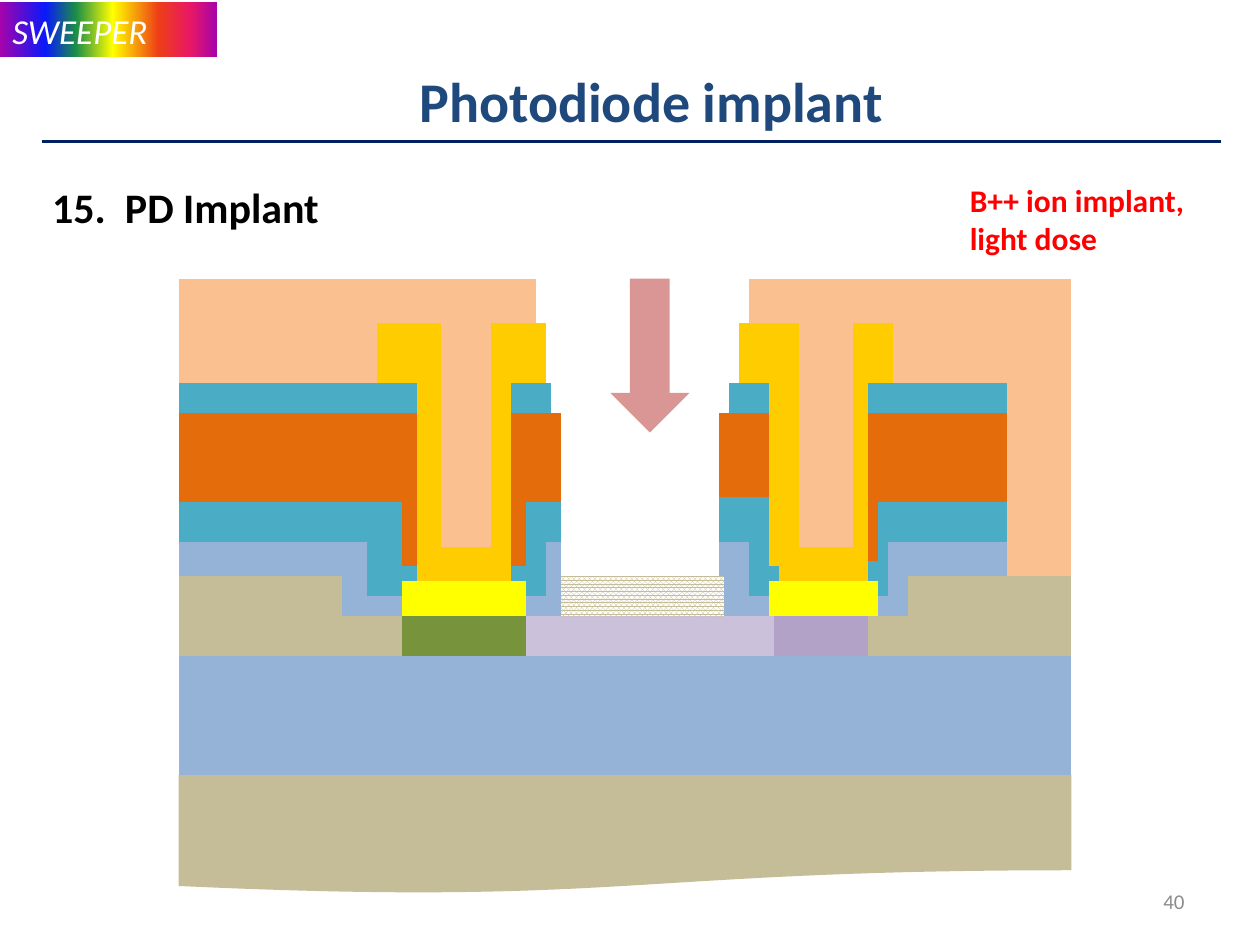
"""Builds the photodiode implant process slide."""
from lxml.etree import SubElement
from pptx import Presentation
from pptx.dml.color import RGBColor
from pptx.enum.dml import MSO_PATTERN
from pptx.enum.shapes import MSO_CONNECTOR, MSO_SHAPE
from pptx.enum.text import MSO_ANCHOR, PP_ALIGN
from pptx.oxml.ns import qn
from pptx.util import Cm, Pt

COLORS = {
    "navy": "002060", "title": "1F497D", "black": "000000", "white": "FFFFFF",
    "red": "FF0000", "grey": "8C8C8C", "resist": "FAC090", "metal": "FFCC00",
    "polymer": "E46C0A", "nitride": "4BACC6", "contact": "FFFF00",
    "oxide": "95B3D7", "silicon": "C4BD97", "n_well": "77933C",
    "p_well": "B3A2C7", "channel": "CCC1DA", "ions": "D99694",
}
SPECTRUM = [(0, "A603AB"), (21, "0819FB"), (35, "1A8D48"), (52, "FFFF00"),
            (73, "EE3F17"), (88, "E81766"), (100, "A603AB")]
STACK_LEFT, STACK_TOP = 3.6, 5.62

STACK = [
    ("resist", [(14.4, 0, 3.6, 7.8), (11.5, 0, 2.9, 7.8), (0, 0, 7.2, 7.6)]),
    ("metal", [(11.3, 0.9, 1.2, 5.9), (13.6, 0.9, 0.8, 5.9), (6.3, 0.9, 1.1, 5.9),
               (4, 0.9, 1.3, 5.9), (5.2, 5.4, 1.4, 0.7)]),
    ("polymer", [(10.9, 2.7, 1, 4.9), (13.9, 2.7, 2.8, 4.9), (6.7, 2.7, 1, 4.9),
                 (0, 2.7, 4.8, 4.9)]),
    ("nitride", [(13.9, 5.7, 1.5, 1.9), (6.7, 5.8, 1, 1.9), (0, 5.8, 4.8, 1.9)]),
    ("contact", [(0, 6.1, 18, 0.7)]),
    ("nitride", [(10.9, 4.4, 1, 3.2), (7, 4.5, 0.7, 3.2), (14.1, 4.5, 2.6, 3.1),
                 (0, 4.5, 4.5, 3.1)]),
    ("oxide", [(7.4, 5.3, 0.3, 1.4), (7, 6.4, 4.9, 0.4), (14.1, 6.4, 3.9, 0.4),
               (0, 5.3, 3.8, 1.6), (14.3, 5.3, 2.4, 1.5), (0, 6.4, 4.5, 0.4),
               (0, 7.6, 18, 2.4)]),
    ("silicon", [(0, 6.8, 18, 0.8), (0, 6, 3.3, 1.6), (14.7, 6, 3.3, 1.6)]),
    ("n_well", [(4.5, 6.8, 2.5, 0.8)]),
    ("p_well", [(12, 6.8, 1.9, 0.8)]),
    ("channel", [(7, 6.8, 5, 0.8)]),
    ("nitride", [(0, 2.1, 4.8, 0.6), (6.7, 2.1, 0.8, 0.6), (13.9, 2.1, 2.8, 0.6),
                 (11.1, 2.1, 0.8, 0.6), (14.8, 4.9, 1.9, 0.4)]),
    ("metal", [(12.3, 5.4, 1.6, 0.7)]),
    ("oxide", [(10.9, 5.3, 0.6, 1.5)]),
    ("nitride", [(11.5, 5.8, 0.6, 0.3)]),
]


def rgb(name):
    """Return the named colour."""
    return RGBColor.from_string(COLORS[name])


class SlideBuilder:
    """Holds the style and the current slide."""

    font = "Calibri"

    def __init__(self, slide):
        """Keep the slide to draw on."""
        self.slide = slide

    def shape(self, kind, box):
        """Add a preset shape without outline or shadow."""
        shape = self.slide.shapes.add_shape(kind, *map(Cm, box))
        shape.shadow.inherit = False
        shape.line.fill.background()
        return shape

    def layer(self, color, box, kind=MSO_SHAPE.FLOWCHART_PROCESS):
        """Add a solid part, placed from the top left of the stack."""
        left, top, width, height = box
        part = self.shape(kind, (STACK_LEFT + left, STACK_TOP + top, width, height))
        part.fill.solid()
        part.fill.fore_color.rgb = rgb(color)
        return part

    def hatched_layer(self, color, box):
        """Add a part with a dense dotted pattern."""
        fill = self.layer(color, box).fill
        fill.patterned()
        fill.pattern = MSO_PATTERN.PERCENT_80
        fill.fore_color.rgb = rgb(color)
        fill.back_color.rgb = rgb("white")

    def fill_text(self, frame, words, color, align=PP_ALIGN.LEFT,
                  anchor=MSO_ANCHOR.TOP, wrap=True, tab=None, **style):
        """Put one styled paragraph into a text frame."""
        frame.word_wrap = wrap
        frame.vertical_anchor = anchor
        paragraph = frame.paragraphs[0]
        paragraph.text = words
        paragraph.alignment = align
        if tab:
            tabs = SubElement(paragraph._p.get_or_add_pPr(), qn("a:tabLst"))
            SubElement(tabs, qn("a:tab"), pos=str(Cm(tab)), algn="l")
        font = paragraph.runs[0].font
        for key, value in {"name": self.font, **style}.items():
            setattr(font, key, value)
        font.color.rgb = rgb(color)

    def text(self, box, words, color, **style):
        """Add a text box."""
        frame = self.slide.shapes.add_textbox(*map(Cm, box)).text_frame
        self.fill_text(frame, words, color, **style)

    def badge(self, box, words, stops, **style):
        """Add a label on a horizontal gradient."""
        badge = self.shape(MSO_SHAPE.RECTANGLE, box)
        badge.fill.gradient()
        badge.fill.gradient_angle = 0
        stop_list = badge._element.spPr.find(qn("a:gradFill")).find(qn("a:gsLst"))
        for old_stop in list(stop_list):
            stop_list.remove(old_stop)
        for percent, color in stops:
            stop = SubElement(stop_list, qn("a:gs"), pos=str(percent * 1000))
            SubElement(stop, qn("a:srgbClr"), val=color)
        self.fill_text(badge.text_frame, words, "white",
                       anchor=MSO_ANCHOR.MIDDLE, **style)

    def rule(self, left, right, top, color, width):
        """Add a horizontal line without shadow."""
        rule = self.slide.shapes.add_connector(
            MSO_CONNECTOR.STRAIGHT, Cm(left), Cm(top), Cm(right), Cm(top))
        rule.line.color.rgb = rgb(color)
        rule.line.width = Pt(width)
        SubElement(rule._element.spPr, qn("a:effectLst"))


def main():
    """Build and save the slide."""
    deck = Presentation()
    deck.slide_width, deck.slide_height = Cm(25.4), Cm(19.05)
    builder = SlideBuilder(deck.slides.add_slide(deck.slide_layouts[6]))

    builder.badge((0, 0.05, 4.37, 1.11), "SWEEPER", SPECTRUM, size=Pt(20), italic=True)
    builder.rule(0.84, 24.61, 2.85, "navy", 2)
    builder.text((2.97, 1.22, 20.32, 1.55), "Photodiode implant", "title",
                 align=PP_ALIGN.CENTER, size=Pt(32), bold=True)
    builder.text((0.8, 3.53, 5.94, 1.27), "15.\tPD Implant", "black",
                 wrap=False, tab=1.47, size=Pt(24), bold=True)
    builder.text((19.3, 3.53, 6.1, 1.8), "B++ ion implant, light dose", "red",
                 size=Pt(18), bold=True)
    builder.text((18.21, 17.65, 5.92, 1.02), "40", "grey", align=PP_ALIGN.RIGHT,
                 anchor=MSO_ANCHOR.MIDDLE, size=Pt(12))

    builder.layer("silicon", (0, 10, 18, 2.4), MSO_SHAPE.FLOWCHART_DOCUMENT)
    for material, boxes in STACK:
        for box in boxes:
            builder.layer(material, box)
    builder.layer("ions", (8.7, 0, 1.6, 3.1), MSO_SHAPE.DOWN_ARROW)
    builder.hatched_layer("silicon", (7.7, 6, 3.3, 0.8))
    deck.save("out.pptx")


if __name__ == "__main__":
    main()
